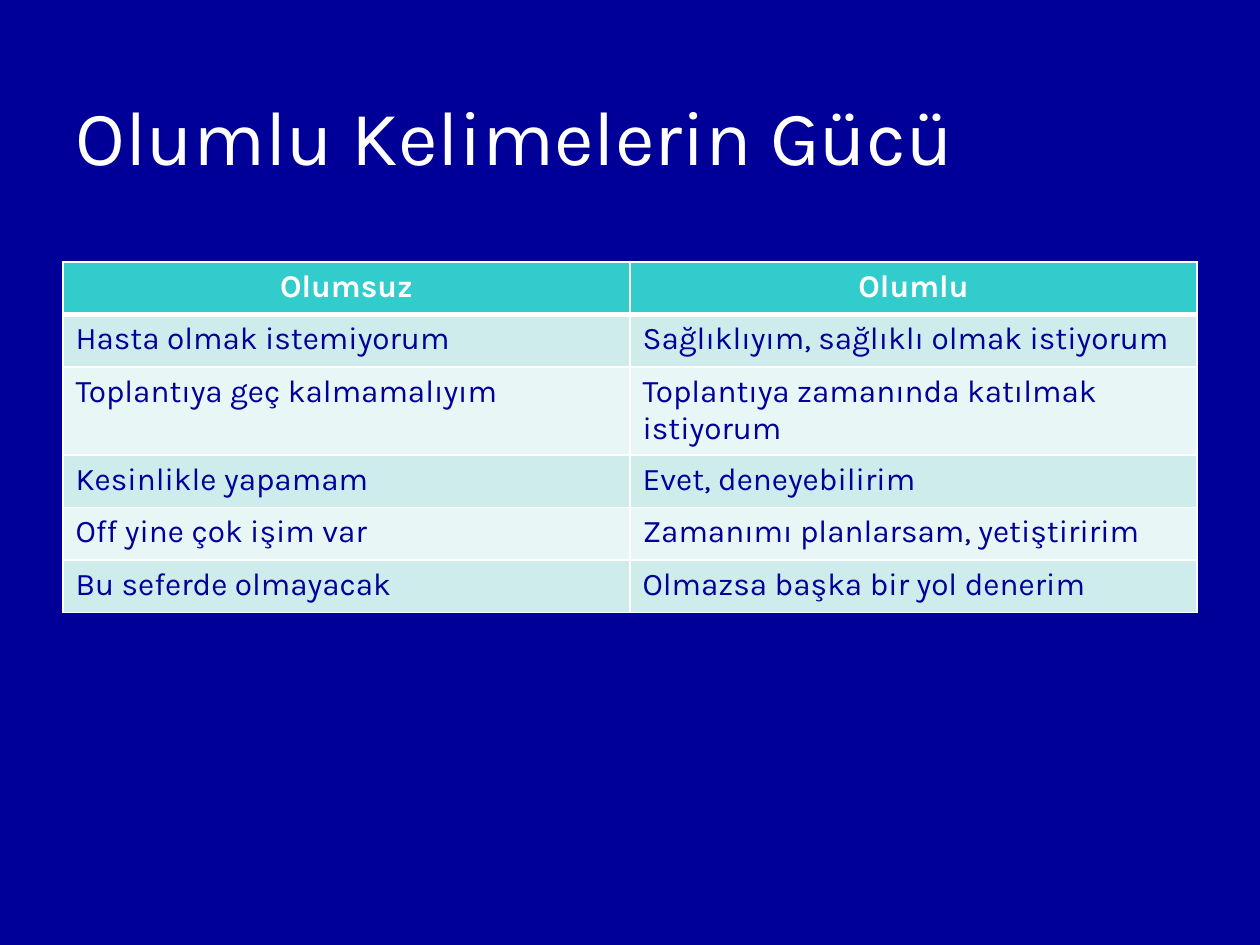
import lxml.etree
import pptx
import pptx.dml.color
import pptx.enum.text
import pptx.oxml.ns
import pptx.util

EMU_PER_PX = 914400 / 126
ROWS = [
    ("Olumsuz", "Olumlu"),
    ("Hasta olmak istemiyorum", "Sağlıklıyım, sağlıklı olmak istiyorum"),
    ("Toplantıya geç kalmamalıyım", "Toplantıya zamanında katılmak istiyorum"),
    ("Kesinlikle yapamam", "Evet, deneyebilirim"),
    ("Off yine çok işim var", "Zamanımı planlarsam, yetiştiririm"),
    ("Bu seferde olmayacak", "Olmazsa başka bir yol denerim"),
]


def px(*lengths):
    """Turn pixel lengths into EMU."""
    return [pptx.util.Emu(round(length * EMU_PER_PX)) for length in lengths]


def color(value):
    """Turn a hex string into a colour."""
    return pptx.dml.color.RGBColor.from_string(value)


def write_text(frame, text, font="Karla", size=18, fill="FFFFFF", bold=False, align="LEFT"):
    """Write one formatted paragraph into a text frame."""
    paragraph = frame.paragraphs[0]
    paragraph.alignment = getattr(pptx.enum.text.PP_ALIGN, align)
    run = paragraph.add_run()
    run.text = text
    run.font.name = font
    run.font.size = pptx.util.Pt(size)
    run.font.bold = bold
    run.font.color.rgb = color(fill)


def add_border(cell, side, width, line_color="FFFFFF"):
    """Draw a solid line on one side of a cell."""
    qualified = pptx.oxml.ns.qn
    properties = cell._tc.get_or_add_tcPr()
    line = lxml.etree.SubElement(
        properties, qualified(f"a:ln{side}"), w=str(pptx.util.Pt(width)))
    fill = lxml.etree.SubElement(line, qualified("a:solidFill"))
    lxml.etree.SubElement(fill, qualified("a:srgbClr"), val=line_color)


class SlideBuilder:
    """Hold the style and the current slide."""

    background = "000099"
    header_fill = "33CCCC"
    band_fills = ("E8F6F6", "CEECEC")
    body_text = "010199"

    def __init__(self, presentation):
        """Add a blank slide with the background colour."""
        self.slide = presentation.slides.add_slide(presentation.slide_layouts[6])
        self.slide.background.fill.solid()
        self.slide.background.fill.fore_color.rgb = color(self.background)

    def add_title(self, text, left, top, width, height):
        """Add the slide title."""
        frame = self.slide.shapes.add_textbox(*px(left, top, width, height)).text_frame
        frame.word_wrap = True
        frame.vertical_anchor = pptx.enum.text.MSO_ANCHOR.MIDDLE
        write_text(frame, text, size=44)

    def add_table(self, rows, left, top, width, height):
        """Add a table with a header row and banded body rows."""
        table = self.slide.shapes.add_table(
            len(rows), len(rows[0]), *px(left, top, width, height)).table
        for row_index, row in enumerate(rows):
            for column_index, text in enumerate(row):
                self.fill_cell(table.cell(row_index, column_index), text, row_index)

    def fill_cell(self, cell, text, row_index):
        """Style one cell by its row."""
        header = row_index == 0
        widths = {"L": 1, "R": 1, "T": 3 if row_index == 1 else 1, "B": 3 if header else 1}
        for side, width in widths.items():
            add_border(cell, side, width)
        cell.fill.solid()
        cell.fill.fore_color.rgb = color(
            self.header_fill if header else self.band_fills[row_index % 2])
        write_text(cell.text_frame, text, bold=header,
                   fill="FFFFFF" if header else self.body_text,
                   align="CENTER" if header else "LEFT")


def main():
    """Build and save the presentation."""
    presentation = pptx.Presentation()
    presentation.slide_width, presentation.slide_height = px(1260, 945)
    builder = SlideBuilder(presentation)
    builder.add_title("Olumlu Kelimelerin Gücü", 63, 40, 1134, 190)
    builder.add_table(ROWS, 63, 262, 1134, 315)
    presentation.save("out.pptx")


if __name__ == "__main__":
    main()
